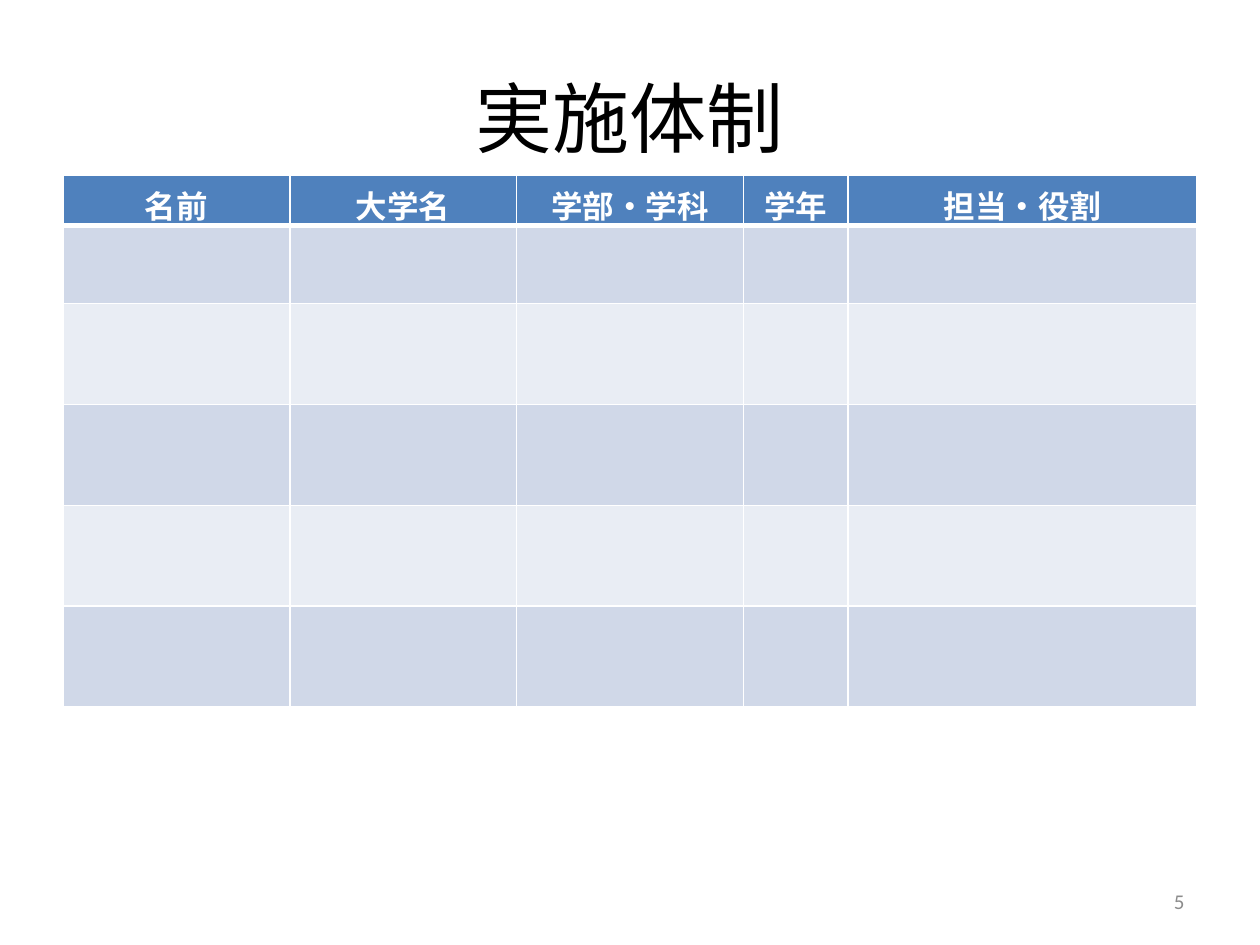
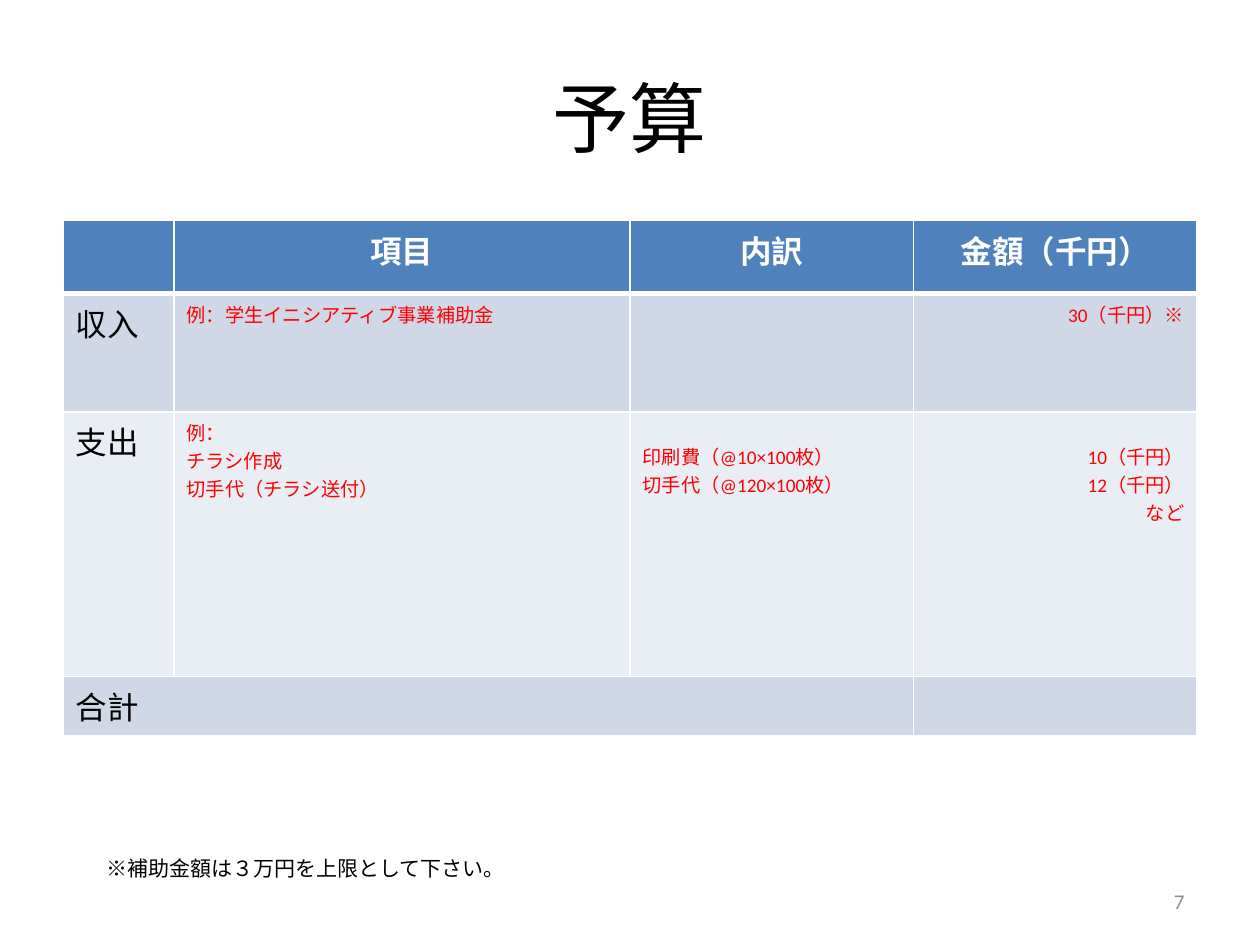
from lxml.etree import SubElement
from pptx import Presentation
from pptx.dml.color import RGBColor as RGB
from pptx.enum.text import MSO_ANCHOR as ANCHOR, PP_ALIGN as ALIGN
from pptx.oxml.ns import qn
from pptx.util import Inches, Pt

FONT = "Calibri"
COLORS = {"text": "000000", "white": "FFFFFF", "header": "4F81BD",
          "odd": "D0D8E8", "even": "E9EDF4", "example": "FF0000",
          "number": "8C8C8C"}
LABEL = {"size": 18}
EXAMPLE = {"size": 11, "color": "example"}
AMOUNT = {**EXAMPLE, "align": ALIGN.RIGHT}
HEADER = {"size": 18, "color": "white", "bold": True, "align": ALIGN.CENTER}


def write(tf, text, size=18, color="text", bold=False, align=ALIGN.LEFT):
    """Fill a text frame with one paragraph per line of text."""
    for i, line in enumerate(text.split("\n")):
        p = tf.paragraphs[0] if i == 0 else tf.add_paragraph()
        p.alignment = align
        r = p.add_run()
        r.text = line
        r.font.name = FONT
        r.font.size = Pt(size)
        r.font.bold = bold
        r.font.color.rgb = RGB.from_string(COLORS[color])


def add_text(s, text, x, y, w, h, anchor=ANCHOR.TOP, **fmt):
    """Add a wrapped text box."""
    tf = s.shapes.add_textbox(Inches(x), Inches(y), Inches(w), Inches(h)).text_frame
    tf.word_wrap = True
    tf.vertical_anchor = anchor
    write(tf, text, **fmt)


def add_border(cell, side, width):
    """Draw a white border on one side of a cell."""
    ln = SubElement(cell._tc.get_or_add_tcPr(), qn(f"a:ln{side}"), w=str(Pt(width)))
    fill = SubElement(ln, qn("a:solidFill"))
    SubElement(fill, qn("a:srgbClr"), val=COLORS["white"])


def style_cell(cell, row):
    """Give a cell its borders and the fill of its row."""
    heavy = {0: "B", 1: "T"}.get(row)
    for side in "LRTB":
        add_border(cell, side, 3 if side == heavy else 1)
    band = "header" if row == 0 else "odd" if row % 2 else "even"
    cell.fill.solid()
    cell.fill.fore_color.rgb = RGB.from_string(COLORS[band])


def add_banded_table(s, y, widths, heights, headers):
    """Add a banded table with a header row and return it."""
    table = s.shapes.add_table(len(heights), len(widths), Inches(0.5), Inches(y),
                               Inches(sum(widths)), Inches(sum(heights))).table
    for column, width in zip(table.columns, widths):
        column.width = Inches(width)
    for i, (row, height) in enumerate(zip(table.rows, heights)):
        row.height = Inches(height)
        for cell in row.cells:
            style_cell(cell, i)
    for cell, header in zip(table.rows[0].cells, headers):
        if header:
            write(cell.text_frame, header, **HEADER)
    return table


def add_slide(prs, title, number):
    """Add a slide with its title and page number."""
    s = prs.slides.add_slide(prs.slide_layouts[6])
    add_text(s, title, 0.5, 0.3, 9, 1.25, ANCHOR.MIDDLE, size=44, align=ALIGN.CENTER)
    add_text(s, str(number), 7.17, 6.95, 2.33, 0.4, ANCHOR.MIDDLE,
             size=12, color="number", align=ALIGN.RIGHT)
    return s


def add_team_slide(prs):
    """Add the team slide with its empty member table."""
    s = add_slide(prs, "実施体制", 5)
    add_banded_table(s, 1.39, [1.8, 1.8, 1.8, 0.83, 2.77], [0.31, 0.62] + [0.8] * 4,
                     ["名前", "大学名", "学部・学科", "学年", "担当・役割"])


def add_budget_slide(prs):
    """Add the budget slide with example entries and a note."""
    s = add_slide(prs, "予算", 7)
    table = add_banded_table(s, 1.75, [0.88, 3.62, 2.25, 2.25], [0.58, 0.94, 2.1, 0.47],
                             ["", "項目", "内訳", "金額（千円）"])
    table.cell(3, 0).merge(table.cell(3, 2))
    entries = [
        (1, 0, "収入", LABEL),
        (1, 1, "例：学生イニシアティブ事業補助金", EXAMPLE),
        (1, 3, "30（千円）※", AMOUNT),
        (2, 0, "支出", LABEL),
        (2, 1, "例：\nチラシ作成\n切手代（チラシ送付）", EXAMPLE),
        (2, 2, "印刷費（@10×100枚）\n切手代（@120×100枚）", EXAMPLE),
        (2, 3, "10（千円）\n12（千円）\nなど", AMOUNT),
        (3, 0, "合計", LABEL),
    ]
    for row, col, text, fmt in entries:
        write(table.cell(row, col).text_frame, text, **fmt)
    for col in (2, 3):
        table.cell(2, col).margin_top = Inches(0.24)
    add_text(s, "※補助金額は３万円を上限として下さい。", 0.75, 6.74, 3.54, 0.3, size=12)


def main():
    """Build the presentation."""
    prs = Presentation()
    prs.slide_width, prs.slide_height = Inches(10), Inches(7.5)
    add_team_slide(prs)
    add_budget_slide(prs)
    prs.save("out.pptx")


if __name__ == "__main__":
    main()
